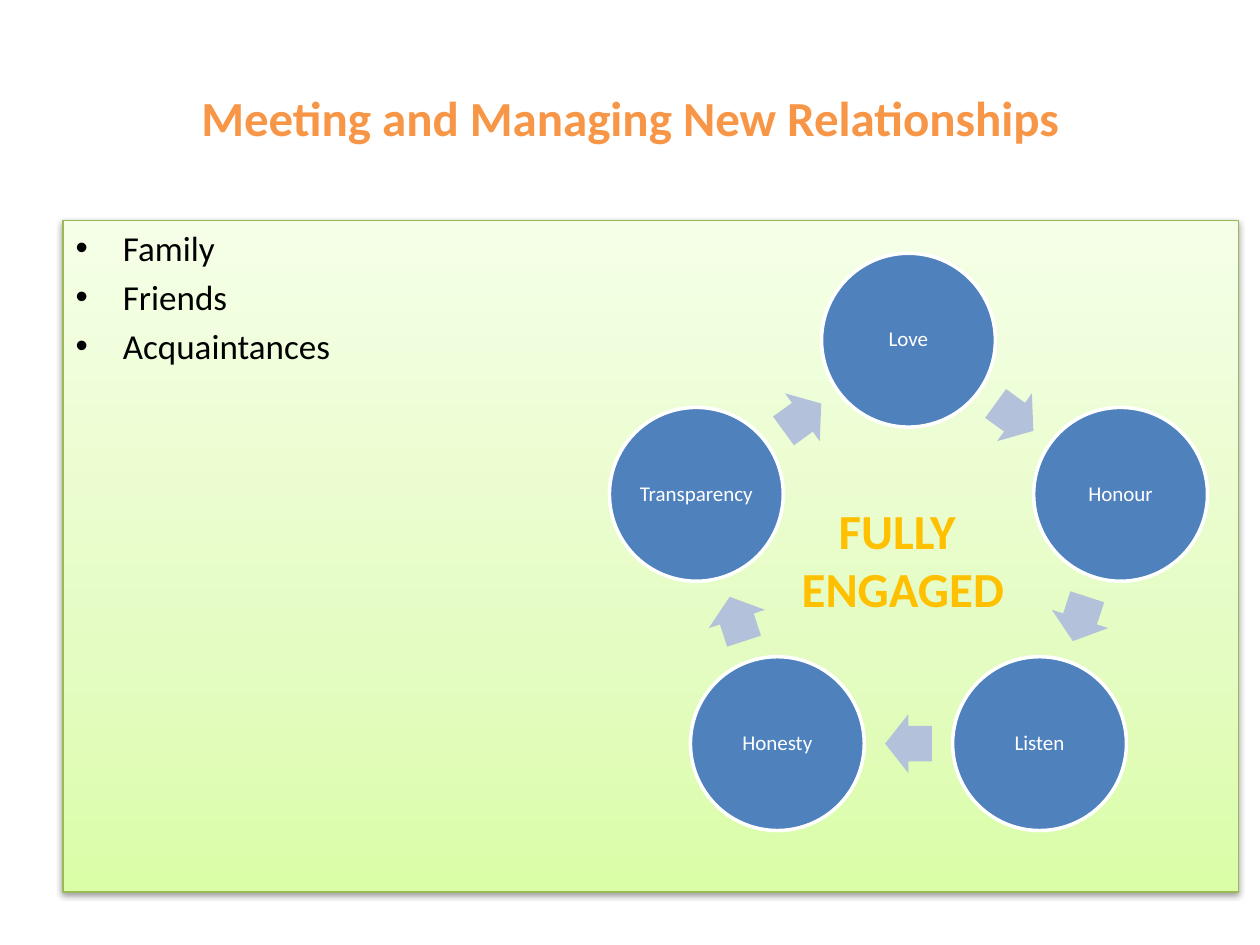
from math import cos, radians, sin

from pptx import Presentation
from pptx.dml.color import RGBColor as RGB
from pptx.enum.shapes import MSO_SHAPE as SHAPE
from pptx.enum.text import MSO_ANCHOR as ANCHOR, PP_ALIGN as ALIGN
from pptx.oxml import parse_xml
from pptx.oxml.ns import nsdecls
from pptx.util import Inches, Pt

# Content
TITLE = "Meeting and Managing New Relationships"
GROUPS = ["Family", "Friends", "Acquaintances"]
VALUES = ["Love", "Honour", "Listen", "Honesty", "Transparency"]
CENTRE_LINES = ["FULLY ", "ENGAGED"]

# Colours, type sizes and font
THEME = {
    "font": "Calibri",
    "title": "F79646", "body": "000000", "label": "FFFFFF", "centre": "FFC000",
    "circle": "4F81BD", "arrow": "B3C1DB", "panel_line": "98B955",
    "panel": [(0, "DAFDA7"), (35, "E4FCC2"), (100, "F5FFE7")],
    "size": {"title": 28, "body": 20, "label": 12, "centre": 28},
}

# Cycle geometry in inches
CX, CY, RADIUS = 7.21, 4.47, 1.77
DIAMETER = 1.38
ARROW_W, ARROW_H = 0.37, 0.47
STEP = 360 / len(VALUES)


def place(s, x, y, w, h):
    s.left, s.top, s.width, s.height = map(Inches, (x, y, w, h))


def style_text(tf, role, bold=False, align=None):
    for p in tf.paragraphs:
        if align is not None:
            p.alignment = align
        for r in p.runs:
            r.font.name = THEME["font"]
            r.font.size = Pt(THEME["size"][role])
            r.font.bold = bold
            r.font.color.rgb = RGB.from_string(THEME[role])


def style_panel(sp):
    """Three-stop gradient, thin outline and soft shadow."""
    sp.fill.gradient()
    sp.fill.gradient_angle = 90
    stops = sp._element.spPr.find(".//{*}gsLst")
    for stop in list(stops):
        stops.remove(stop)
    for pos, color in THEME["panel"]:
        stops.append(parse_xml(
            f'<a:gs {nsdecls("a")} pos="{pos * 1000}"><a:srgbClr val="{color}"/></a:gs>'))
    sp.line.color.rgb = RGB.from_string(THEME["panel_line"])
    sp.line.width = Pt(0.75)
    effects = parse_xml(
        f'<a:effectLst {nsdecls("a")}><a:outerShdw blurRad="{Pt(3.1)}" dist="{Pt(1.6)}" '
        'dir="5400000" rotWithShape="0"><a:srgbClr val="000000"><a:alpha val="38000"/>'
        '</a:srgbClr></a:outerShdw></a:effectLst>')
    sp._element.spPr.append(effects)


def add_centred(shapes, kind, x, y, w, h, color):
    sp = shapes.add_shape(kind, Inches(x - w / 2), Inches(y - h / 2), Inches(w), Inches(h))
    sp.shadow.inherit = False
    sp.fill.solid()
    sp.fill.fore_color.rgb = RGB.from_string(THEME[color])
    return sp


def add_circle(shapes, x, y, label):
    sp = add_centred(shapes, SHAPE.OVAL, x, y, DIAMETER, DIAMETER, "circle")
    sp.line.color.rgb = RGB.from_string(THEME["label"])
    sp.line.width = Pt(2)
    tf = sp.text_frame
    tf.text = label
    tf.word_wrap = False
    tf.vertical_anchor = ANCHOR.MIDDLE
    tf.margin_left = tf.margin_right = tf.margin_top = tf.margin_bottom = Inches(0.02)
    tf.paragraphs[0].line_spacing = 0.9
    style_text(tf, "label", align=ALIGN.CENTER)


def add_arrow(shapes, x, y, angle):
    sp = add_centred(shapes, SHAPE.RIGHT_ARROW, x, y, ARROW_W, ARROW_H, "arrow")
    sp.line.fill.background()
    sp.adjustments[0], sp.adjustments[1] = 0.6, 0.5
    sp.rotation = angle


def on_ring(angle, radius):
    """Point at a clockwise angle from the top of the cycle."""
    a = radians(angle)
    return CX + radius * sin(a), CY - radius * cos(a)


def main():
    prs = Presentation()
    prs.slide_width, prs.slide_height = Inches(10), Inches(7.5)
    slide = prs.slides.add_slide(prs.slide_layouts[1])
    shapes = slide.shapes

    # Title
    title = shapes.title
    place(title, 0.5, 0.3, 9, 1.25)
    title.text_frame.text = TITLE
    style_text(title.text_frame, "title", bold=True, align=ALIGN.CENTER)

    # Panel with the list
    body = slide.placeholders[1]
    place(body, 0.5, 1.75, 9.33, 5.33)
    style_panel(body)
    body.text_frame.text = "\n".join(GROUPS)
    style_text(body.text_frame, "body")

    # Cycle: each arrow sits midway between two neighbouring circles
    mid_radius = RADIUS * cos(radians(STEP / 2))
    for i, label in enumerate(VALUES):
        angle = i * STEP
        add_circle(shapes, *on_ring(angle, RADIUS), label)
        half = angle + STEP / 2
        add_arrow(shapes, *on_ring(half, mid_radius), half)

    # Words in the middle of the cycle
    box = shapes.add_textbox(Inches(6.25), Inches(3.92), Inches(1.83), Inches(1.04))
    tf = box.text_frame
    tf.word_wrap = True
    tf.text = "\n".join(CENTRE_LINES)
    style_text(tf, "centre", bold=True, align=ALIGN.CENTER)

    prs.save("out.pptx")


if __name__ == "__main__":
    main()
